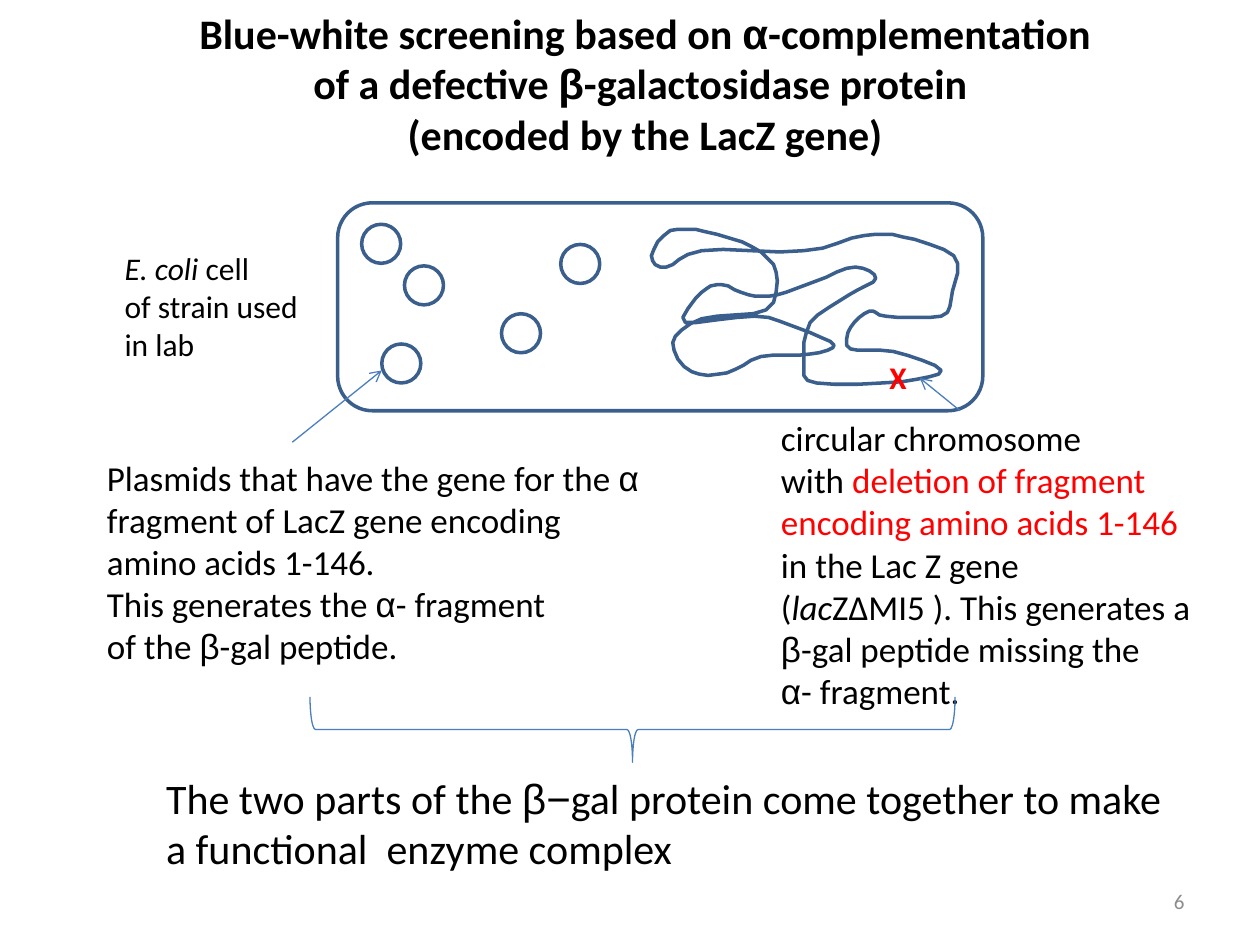
"""Build a slide on blue-white screening by alpha-complementation."""
from dataclasses import dataclass
from itertools import groupby

from lxml.etree import SubElement
from pptx import Presentation
from pptx.dml.color import RGBColor
from pptx.enum.shapes import MSO_CONNECTOR as Connector, MSO_SHAPE as Shape
from pptx.enum.text import MSO_ANCHOR as Anchor, MSO_AUTO_SIZE as AutoSize, PP_ALIGN as Align
from pptx.oxml.ns import qn
from pptx.util import Inches, Pt


@dataclass(frozen=True)
class Theme:
    font: str = "Calibri"
    symbol_font: str = "Arial"
    symbols: str = "αβ−"
    text: str = "000000"
    highlight: str = "FF0000"
    muted: str = "8C8C8C"
    paper: str = "FFFFFF"
    outline: str = "3A5F8C"
    pointer: str = "4B7EBC"
    outline_width: float = 2
    pointer_width: float = 0.75
    heading: int = 24
    body: int = 20
    label: int = 18
    number: int = 12


THEME = Theme()
PLASMID_SIZE = 0.31
PLASMIDS = [(2.87, 1.78), (3.98, 2.49), (3.21, 2.11), (4.45, 1.94), (3.03, 2.73)]
CHROMOSOME = [
    (529, 212), (557, 199), (638, 199), (686, 187), (716, 188), (757, 203),
    (756, 231), (747, 251), (703, 251), (690, 247), (675, 260), (675, 277),
    (709, 279), (747, 294), (716, 303), (648, 304), (638, 288), (643, 256),
    (674, 234), (695, 221), (679, 212), (648, 223), (617, 234), (594, 234),
    (573, 226), (557, 232), (544, 256), (599, 251), (635, 261), (662, 274),
    (643, 281), (604, 283), (577, 296), (549, 295), (534, 272), (557, 253),
    (608, 246), (616, 216), (597, 196), (560, 184), (532, 183), (517, 203),
]


def write_text(frame, paragraphs, size=THEME.body, color=THEME.text, bold=False,
               align=Align.LEFT, anchor=Anchor.TOP, wrap=True):
    """Fill a frame with paragraphs of (text, overrides) runs or plain strings."""
    frame.auto_size, frame.word_wrap, frame.vertical_anchor = AutoSize.NONE, wrap, anchor
    for index, pieces in enumerate(paragraphs):
        paragraph = frame.add_paragraph() if index else frame.paragraphs[0]
        paragraph.alignment = align
        for piece in [pieces] if isinstance(pieces, str) else pieces:
            text, style = (piece, {}) if isinstance(piece, str) else piece
            for is_symbol, letters in groupby(text, lambda letter: letter in THEME.symbols):
                run = paragraph.add_run()
                run.text = "".join(letters)
                run.font.name = THEME.symbol_font if is_symbol else THEME.font
                run.font.size, run.font.bold = Pt(size), bold
                run.font.italic = style.get("italic", False)
                run.font.color.rgb = RGBColor.from_string(style.get("color", color))


def add_text(slide, box, paragraphs, **style):
    """Add a text box at left, top, width, height."""
    shape = slide.shapes.add_textbox(*map(Inches, box))
    write_text(shape.text_frame, paragraphs, **style)


def set_title(slide, box, paragraphs, **style):
    """Place and fill the title placeholder."""
    title = slide.shapes.title
    title.left, title.top, title.width, title.height = map(Inches, box)
    write_text(title.text_frame, paragraphs, **style)


def style_outline(shape, color=THEME.outline, width=THEME.outline_width, fill=None):
    """Give a shape its line, optional fill and no shadow."""
    shape.shadow.inherit = False
    shape.line.color.rgb, shape.line.width = RGBColor.from_string(color), Pt(width)
    if fill:
        shape.fill.solid()
        shape.fill.fore_color.rgb = RGBColor.from_string(fill)
    else:
        shape.fill.background()


def add_outline(slide, kind, box, **style):
    """Add an outlined preset shape."""
    shape = slide.shapes.add_shape(kind, *map(Inches, box))
    style_outline(shape, **style)
    return shape


def smooth_loop(points, steps=4):
    """Return a closed Catmull-Rom curve through the points."""
    curve = []
    for index in range(len(points)):
        corners = [points[(index + shift) % len(points)] for shift in (-1, 0, 1, 2)]
        for step in range(steps):
            t = step / steps
            curve.append(tuple(
                b + t * (c - a + t * (2 * a - 5 * b + 4 * c - d
                                      + t * (3 * (b - c) + d - a))) / 2
                for a, b, c, d in zip(*corners)))
    return curve


def add_chromosome(slide, points):
    """Draw the closed chromosome from points in hundredths of an inch."""
    first, *others = smooth_loop(points)
    builder = slide.shapes.build_freeform(*first, scale=Inches(0.01))
    builder.add_line_segments(others, close=True)
    style_outline(builder.convert_to_shape())


def add_arrow(slide, start, end):
    """Add a thin arrow that points at its end."""
    arrow = slide.shapes.add_connector(Connector.STRAIGHT, *map(Inches, start + end))
    arrow.line.color.rgb = RGBColor.from_string(THEME.pointer)
    arrow.line.width = Pt(THEME.pointer_width)
    properties = arrow._element.spPr
    SubElement(properties.find(qn("a:ln")), qn("a:tailEnd"), type="arrow")
    SubElement(properties, qn("a:effectLst"))


def add_cell(slide):
    """Draw the cell with its plasmids, chromosome and deletion mark."""
    add_outline(slide, Shape.ROUNDED_RECTANGLE, (2.68, 1.61, 5.12, 1.65), fill=THEME.paper)
    for left, top in PLASMIDS:
        add_outline(slide, Shape.OVAL, (left, top, PLASMID_SIZE, PLASMID_SIZE))
    add_chromosome(slide, CHROMOSOME)
    add_text(slide, (6.96, 2.79, 0.34, 0.4), ["X"], size=THEME.label,
             color=THEME.highlight, bold=True, wrap=False)


def add_explanations(slide):
    """Add the cell label, both descriptions and the conclusion."""
    red, italic = {"color": THEME.highlight}, {"italic": True}
    add_text(slide, (0.89, 1.93, 1.59, 1.01),
             [[("E. coli ", italic), "cell"], "of strain used", "in lab"],
             size=THEME.label, wrap=False)
    add_text(slide, (0.75, 3.57, 4.57, 2.39), [
        "Plasmids that have the gene for the α fragment of LacZ gene encoding",
        "amino acids 1-146.",
        "This generates the α- fragment",
        "of the β-gal peptide.",
    ])
    add_text(slide, (6.1, 3.26, 3.9, 2.79), [
        "circular chromosome",
        ["with ", ("deletion of fragment", red)],
        [("encoding amino acids 1-146", red)],
        "in the Lac Z gene",
        ["(", ("lac", italic), "ZΔMI5 ). This generates a"],
        "β-gal peptide missing the",
        "α- fragment.",
    ])
    add_text(slide, (1.22, 6.08, 8.37, 0.91), [
        "The two parts of the β−gal protein come together to make",
        "a functional  enzyme complex",
    ], size=THEME.heading, wrap=False)


def main():
    """Build and save the slide."""
    presentation = Presentation()
    presentation.slide_width, presentation.slide_height = Inches(10), Inches(7.5)
    slide = presentation.slides.add_slide(presentation.slide_layouts[5])
    set_title(slide, (0.62, 0.01, 9, 1.33), [
        "Blue-white screening based on α-complementation",
        "of a defective β-galactosidase protein ",
        "(encoded by the LacZ gene)",
    ], size=THEME.heading, bold=True, align=Align.CENTER)
    add_cell(slide)
    add_explanations(slide)
    brace = add_outline(slide, Shape.RIGHT_BRACE, (4.76, 3.23, 0.52, 5.12),
                        color=THEME.pointer, width=THEME.pointer_width)
    brace.rotation = 90
    add_arrow(slide, (7.62, 3.26), (7.3, 3))
    add_arrow(slide, (2.32, 3.51), (3.03, 2.94))
    add_text(slide, (7.17, 6.95, 2.33, 0.4), ["6"], size=THEME.number,
             color=THEME.muted, align=Align.RIGHT, anchor=Anchor.MIDDLE)
    presentation.save("out.pptx")


if __name__ == "__main__":
    main()
